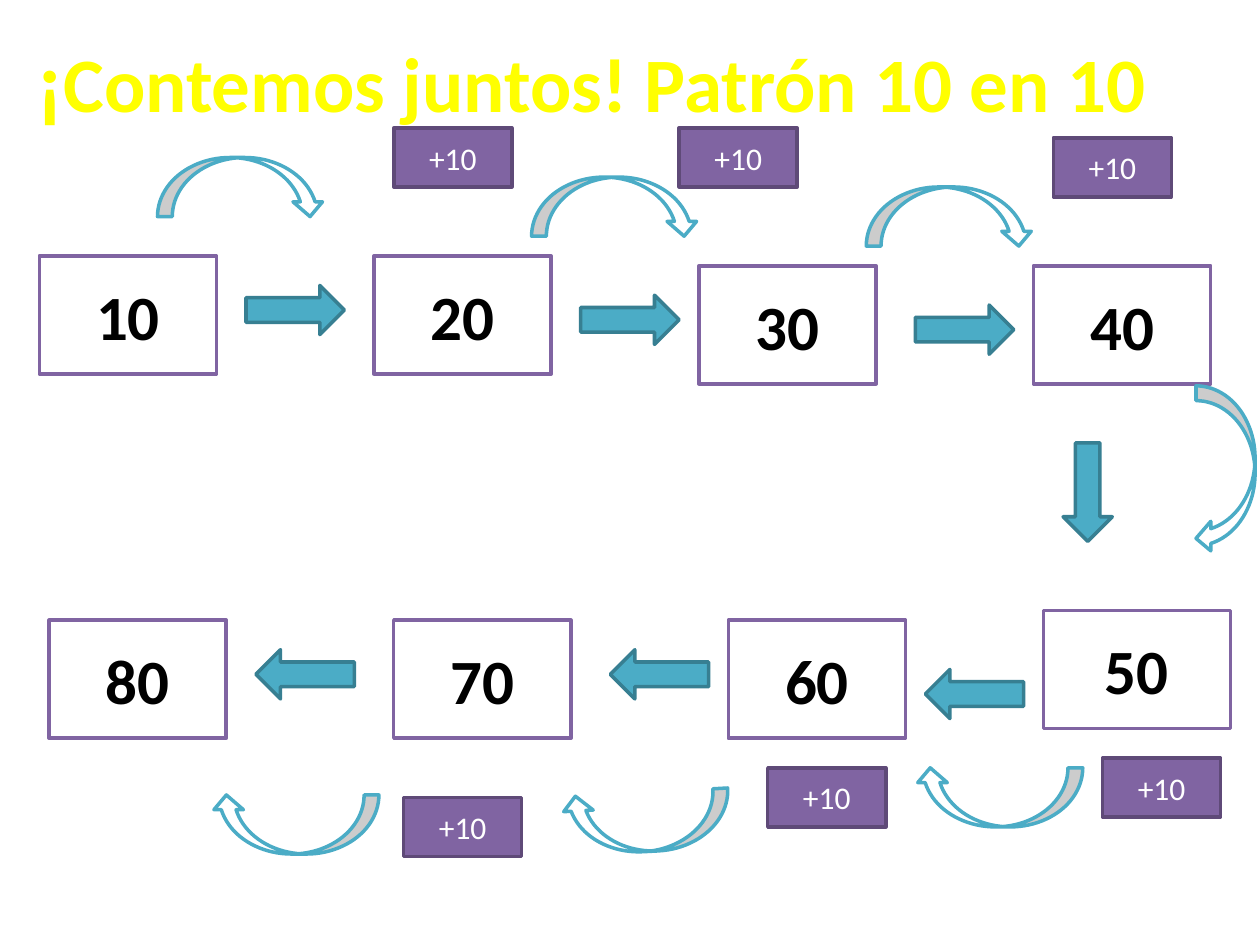
from pptx import Presentation
from pptx.dml.color import RGBColor
from pptx.enum import shapes, text
from pptx.util import Pt

FONT = "Calibri"
WHITE, BLACK, YELLOW = "FFFFFF", "000000", "FFFF00"
PURPLE, DARK_PURPLE = "8064A2", "5F4A78"
TEAL, DARK_TEAL = "4BACC6", "377F92"

BOX_SIZE = (101.25, 67.5)
LABEL_SIZE = (67.5, 33.75)
ARROW_SIZE = (56.25, 28.12)
JUMP_SIZE = (95.62, 33.75)


def color(hex_string):
    return RGBColor.from_string(hex_string)


def format_text(text_frame, content, size, hex_string, bold):
    text_frame.text = content
    text_frame.word_wrap = True
    text_frame.vertical_anchor = text.MSO_ANCHOR.MIDDLE
    paragraph = text_frame.paragraphs[0]
    paragraph.alignment = text.PP_ALIGN.CENTER
    font = paragraph.runs[0].font
    font.name, font.size, font.bold = FONT, Pt(size), bold
    font.color.rgb = color(hex_string)


def add_shape(slide, kind, left, top, size, fill, line, rotation=0):
    shape = slide.shapes.add_shape(kind, Pt(left), Pt(top), Pt(size[0]), Pt(size[1]))
    shape.shadow.inherit = False
    shape.rotation = rotation
    shape.fill.solid()
    shape.fill.fore_color.rgb = color(fill)
    shape.line.color.rgb = color(line)
    shape.line.width = Pt(2)
    return shape


def add_number(slide, left, top, number, size=BOX_SIZE):
    shape = add_shape(slide, shapes.MSO_SHAPE.RECTANGLE, left, top, size, WHITE, PURPLE)
    format_text(shape.text_frame, str(number), 36, BLACK, True)


def add_step_label(slide, left, top):
    shape = add_shape(slide, shapes.MSO_SHAPE.RECTANGLE, left, top, LABEL_SIZE,
                      PURPLE, DARK_PURPLE)
    format_text(shape.text_frame, "+10", 18, WHITE, False)


def add_arrow(slide, left, top, rotation=0):
    add_shape(slide, shapes.MSO_SHAPE.RIGHT_ARROW, left, top, ARROW_SIZE,
              TEAL, DARK_TEAL, rotation)


def add_jump(slide, left, top, rotation=0):
    add_shape(slide, shapes.MSO_SHAPE.CURVED_DOWN_ARROW, left, top, JUMP_SIZE,
              WHITE, TEAL, rotation)


def draw_title(slide, left, top, width, height):
    box = slide.shapes.add_textbox(Pt(left), Pt(top), Pt(width), Pt(height))
    format_text(box.text_frame, "¡", 48, YELLOW, True)
    run = box.text_frame.paragraphs[0].add_run()
    run.text = "Contemos juntos! Patrón 10 en 10"
    run.font.name, run.font.size, run.font.bold = FONT, Pt(44), True
    run.font.color.rgb = color(YELLOW)


def draw_top_row(slide, left, top):
    """Count from 10 to 40, left to right."""
    for number, x, y in ((10, 0, 73.1), (20, 191.25, 73.1),
                         (30, 376.9, 78.75), (40, 568.1, 78.75)):
        add_number(slide, left + x, top + y, number)
    for step in range(3):
        add_arrow(slide, left + 118.1 + 191.25 * step, top + 90 + 5.62 * step)
    for x, y in ((67.5, 16.9), (281.25, 28.1), (472.5, 33.75)):
        add_jump(slide, left + x, top + y)
    for x, y in ((202.5, 0), (365.6, 0), (579.4, 5.62)):
        add_step_label(slide, left + x, top + y)


def draw_turn(slide, left, top):
    """Lead down from 40 to 50."""
    add_arrow(slide, left, top + 15.8, 90)
    add_jump(slide, left + 59.1, top, 90)


def draw_bottom_row(slide, left, top):
    """Count from 50 to 80, right to left."""
    add_number(slide, left + 568.1, top, 50, (106.9, 67.5))
    for number, x in ((60, 388.1), (70, 196.9), (80, 0)):
        add_number(slide, left + x, top + 5.62, number)
    for x, y in ((500.6, 33.75), (320.6, 22.5), (118.1, 22.5)):
        add_arrow(slide, left + x, top + y, 180)
    for x, y, rotation in ((495, 90, 180), (293.1, 104.1, 176.9), (92.8, 105.5, 180)):
        add_jump(slide, left + x, top + y, rotation)
    for x, y in ((601.9, 84.4), (410.6, 90), (202.5, 106.9)):
        add_step_label(slide, left + x, top + y)


def main():
    presentation = Presentation()
    presentation.slide_width, presentation.slide_height = Pt(720), Pt(540)
    slide = presentation.slides.add_slide(presentation.slide_layouts[6])
    draw_title(slide, 0, 0, 676, 90)
    draw_top_row(slide, 22.5, 73.1)
    draw_turn(slide, 593.4, 251.4)
    draw_bottom_row(slide, 28.1, 348.75)
    presentation.save("out.pptx")


if __name__ == "__main__":
    main()
